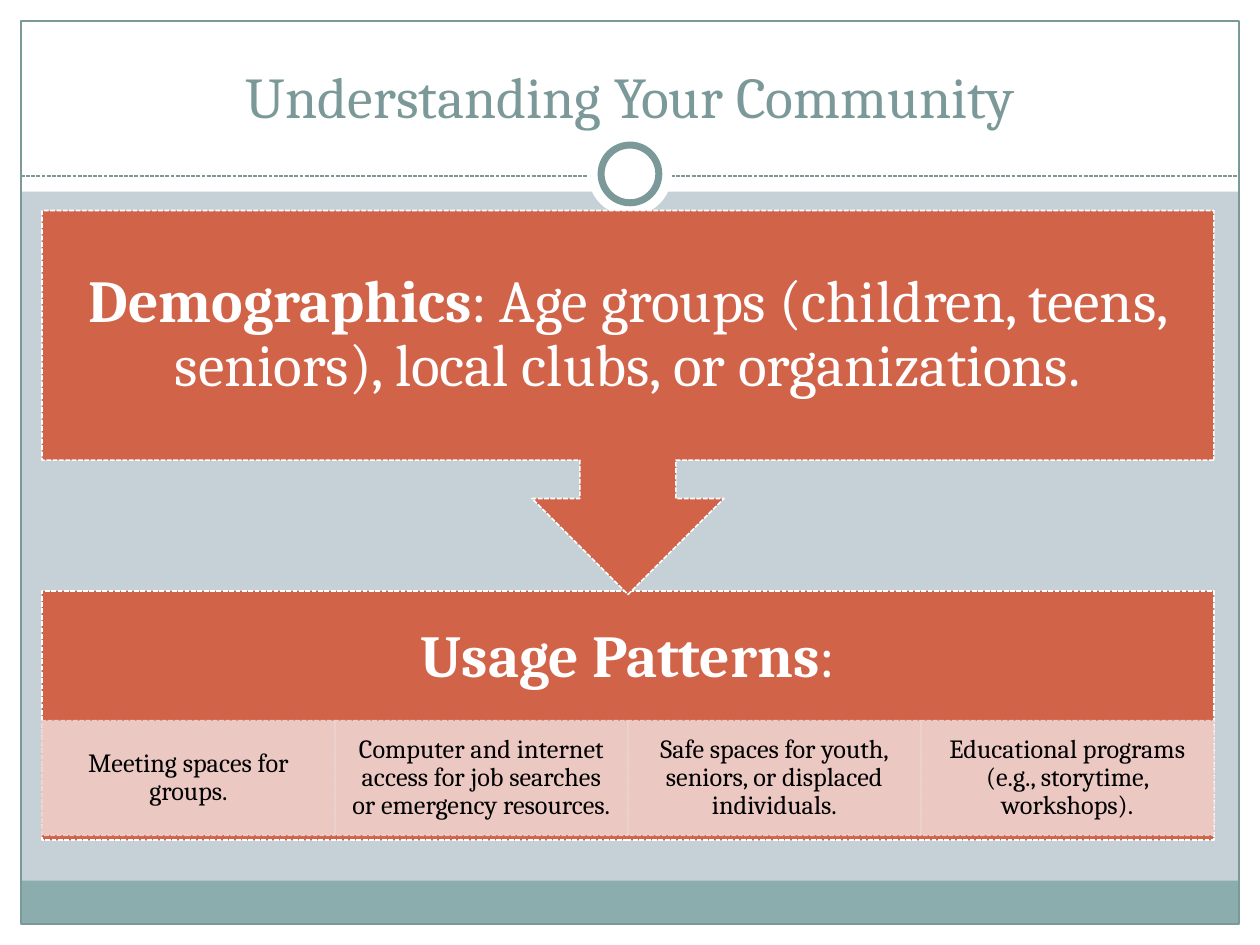
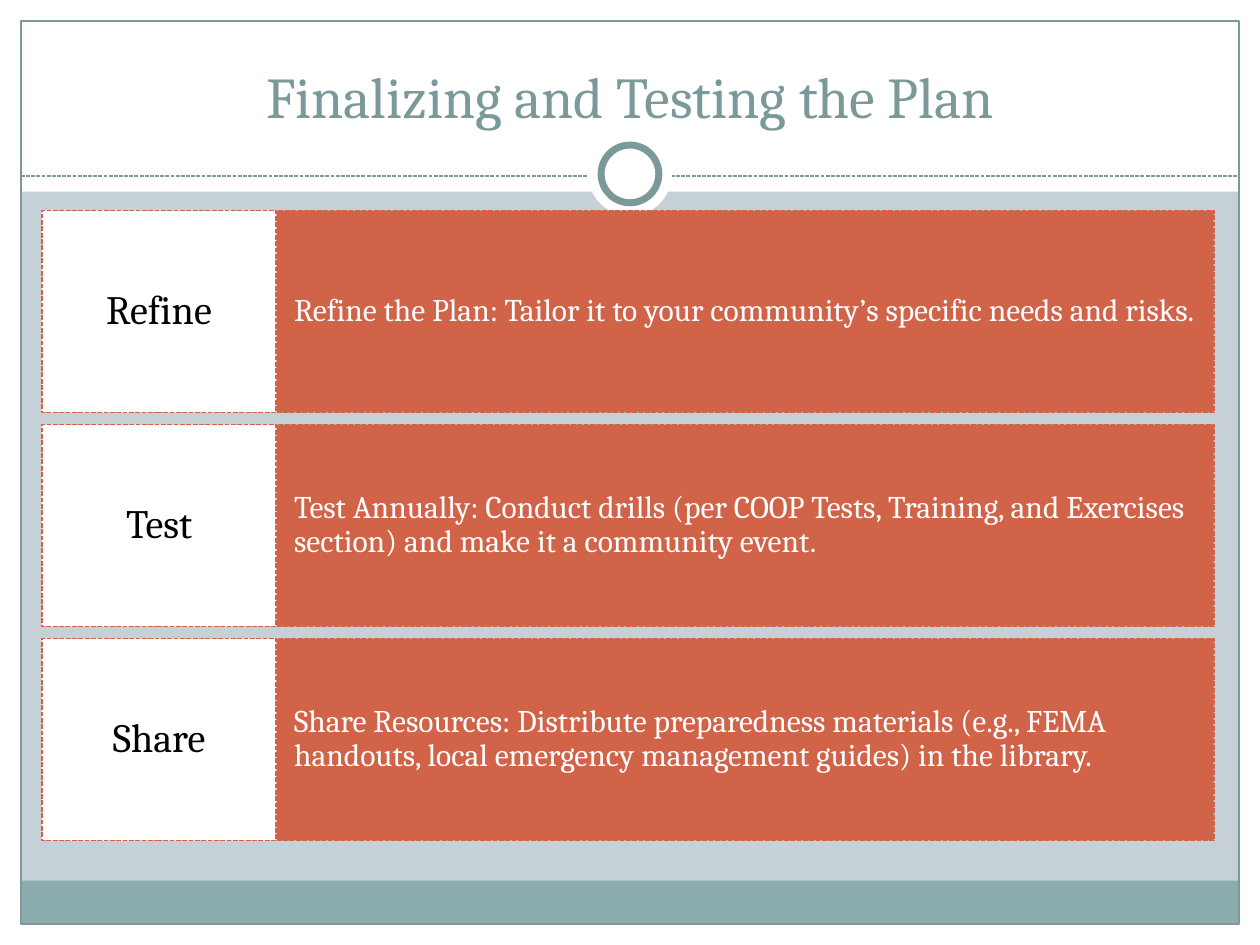
from lxml.etree import SubElement
from pptx import Presentation
from pptx.dml.color import RGBColor
from pptx.enum.dml import MSO_LINE
from pptx.enum.shapes import MSO_CONNECTOR, MSO_SHAPE
from pptx.enum.text import MSO_ANCHOR, PP_ALIGN
from pptx.oxml.ns import qn
from pptx.util import Pt


class Theme:
    font = "Cambria"
    white = RGBColor.from_string("FFFFFF")
    black = RGBColor.from_string("000000")
    canvas = RGBColor.from_string("C5D1D7")
    band = RGBColor.from_string("8CADAE")
    teal = RGBColor.from_string("7C999A")
    rust = RGBColor.from_string("D16349")
    blush = RGBColor.from_string("EED3D0")
    title, heading, label, body, detail = 33, 34, 23, 18, 15
    thin, dashed, ring = 0.75, 0.9, 4


def add_box(s, box, kind=MSO_SHAPE.RECTANGLE, fill=None, line=None,
            width=Theme.dashed, dash=None, alpha=None):
    sp = s.shapes.add_shape(kind, *(Pt(v) for v in box))
    sp.shadow.inherit = False
    if fill is None:
        sp.fill.background()
    else:
        sp.fill.solid()
        sp.fill.fore_color.rgb = fill
    if line is None:
        sp.line.fill.background()
    else:
        sp.line.color.rgb = line
        sp.line.width = Pt(width)
        sp.line.dash_style = dash
    if alpha is not None:
        for clr in sp.element.spPr.iter(qn("a:srgbClr")):
            SubElement(clr, qn("a:alpha")).set("val", str(alpha * 1000))
    return sp


def add_text(sp, text, size, color, lead="", align=PP_ALIGN.CENTER,
             anchor=MSO_ANCHOR.MIDDLE, inset=(7.2, 3.6), spacing=0.9):
    tf = sp.text_frame
    tf.word_wrap = True
    tf.vertical_anchor = anchor
    tf.margin_left = tf.margin_right = Pt(inset[0])
    tf.margin_top = tf.margin_bottom = Pt(inset[1])
    p = tf.paragraphs[0]
    p.alignment = align
    p.line_spacing = spacing
    for part, bold in ((lead, True), (text, False)):
        if part:
            r = p.add_run()
            r.text = part
            r.font.name = Theme.font
            r.font.size = Pt(size)
            r.font.bold = bold
            r.font.color.rgb = color


prs = Presentation()
prs.slide_width, prs.slide_height = Pt(720), Pt(540)
slides = []

for title in ("Understanding Your Community", "Finalizing and Testing the Plan"):
    s = prs.slides.add_slide(prs.slide_layouts[6])
    s.background.fill.solid()
    s.background.fill.fore_color.rgb = Theme.canvas
    for edge in ((0, 528, 720, 12), (0, 0, 720, 109.5), (0, 0, 12, 540), (708, 0, 12, 540)):
        add_box(s, edge, fill=Theme.white)
    add_box(s, (12, 503.25, 696, 24.5), fill=Theme.band)
    add_box(s, (12, 12, 696, 516), line=Theme.teal, width=Theme.thin)
    rule = s.shapes.add_connector(MSO_CONNECTOR.STRAIGHT, Pt(12), Pt(100.6), Pt(708), Pt(100.6))
    rule.line.color.rgb = Theme.teal
    rule.line.width = Pt(Theme.thin)
    rule.line.dash_style = MSO_LINE.SQUARE_DOT
    SubElement(rule.element.spPr, qn("a:effectLst"))
    add_box(s, (336, 75.4, 48, 48), MSO_SHAPE.OVAL, fill=Theme.white)
    add_box(s, (343.5, 82.9, 33, 33), MSO_SHAPE.OVAL, fill=Theme.white,
            line=Theme.teal, width=Theme.ring)
    tb = s.shapes.add_textbox(Pt(24), Pt(18), Pt(672), Pt(60))
    add_text(tb, title, Theme.title, Theme.teal, anchor=MSO_ANCHOR.BOTTOM, spacing=1.0)
    slides.append(s)

community, testing = slides
left, top, width = 24, 120.3, 669.6

usage_top, usage_height = 337.7, 142.4
add_box(community, (left, usage_top, width, usage_height), fill=Theme.rust,
        line=Theme.white, dash=MSO_LINE.SQUARE_DOT)
tb = community.shapes.add_textbox(Pt(left), Pt(usage_top), Pt(width), Pt(76.9))
add_text(tb, ":", Theme.heading, Theme.white, lead="Usage Patterns", inset=(18.7, 18.7))

uses = (
    "Meeting spaces for groups.",
    "Computer and internet access for job searches or emergency resources.",
    "Safe spaces for youth, seniors, or displaced individuals.",
    "Educational programs (e.g., storytime, workshops).",
)
use_width = width / len(uses)
for i, use in enumerate(uses):
    sp = add_box(community, (left + i * use_width, 411.8, use_width, 65.5), fill=Theme.blush,
                 line=Theme.blush, dash=MSO_LINE.SQUARE_DOT, alpha=90)
    add_text(sp, use, Theme.detail, Theme.black, inset=(8.6, 1.4))

callout = add_box(community, (left, top, width, 219.4), MSO_SHAPE.UP_ARROW_CALLOUT,
                  fill=Theme.rust, line=Theme.white, dash=MSO_LINE.SQUARE_DOT)
callout.rotation = 180
tb = community.shapes.add_textbox(Pt(left), Pt(top), Pt(width), Pt(142.4))
add_text(tb, ": Age groups (children, teens, seniors), local clubs, or organizations.",
         Theme.heading, Theme.white, lead="Demographics", inset=(18.7, 18.7))

steps = (
    ("Refine", "Refine the Plan: Tailor it to your community’s specific needs and risks."),
    ("Test", "Test Annually: Conduct drills (per COOP Tests, Training, and Exercises section) "
             "and make it a community event."),
    ("Share", "Share Resources: Distribute preparedness materials (e.g., FEMA handouts, "
              "local emergency management guides) in the library."),
)
label_width = width / 5
step_height, step_pitch = 115.4, 122.3
for i, (label, action) in enumerate(steps):
    y = top + i * step_pitch
    sp = add_box(testing, (left + label_width, y, width - label_width, step_height),
                 fill=Theme.rust, line=Theme.rust, dash=MSO_LINE.SQUARE_DOT)
    add_text(sp, action, Theme.body, Theme.white, align=PP_ALIGN.LEFT, inset=(10.2, 29.5))
    sp = add_box(testing, (left, y, label_width, step_height), fill=Theme.white,
                 line=Theme.rust, dash=MSO_LINE.SQUARE_DOT)
    add_text(sp, label, Theme.label, Theme.black, inset=(7.2, 11.5))

prs.save("out.pptx")
